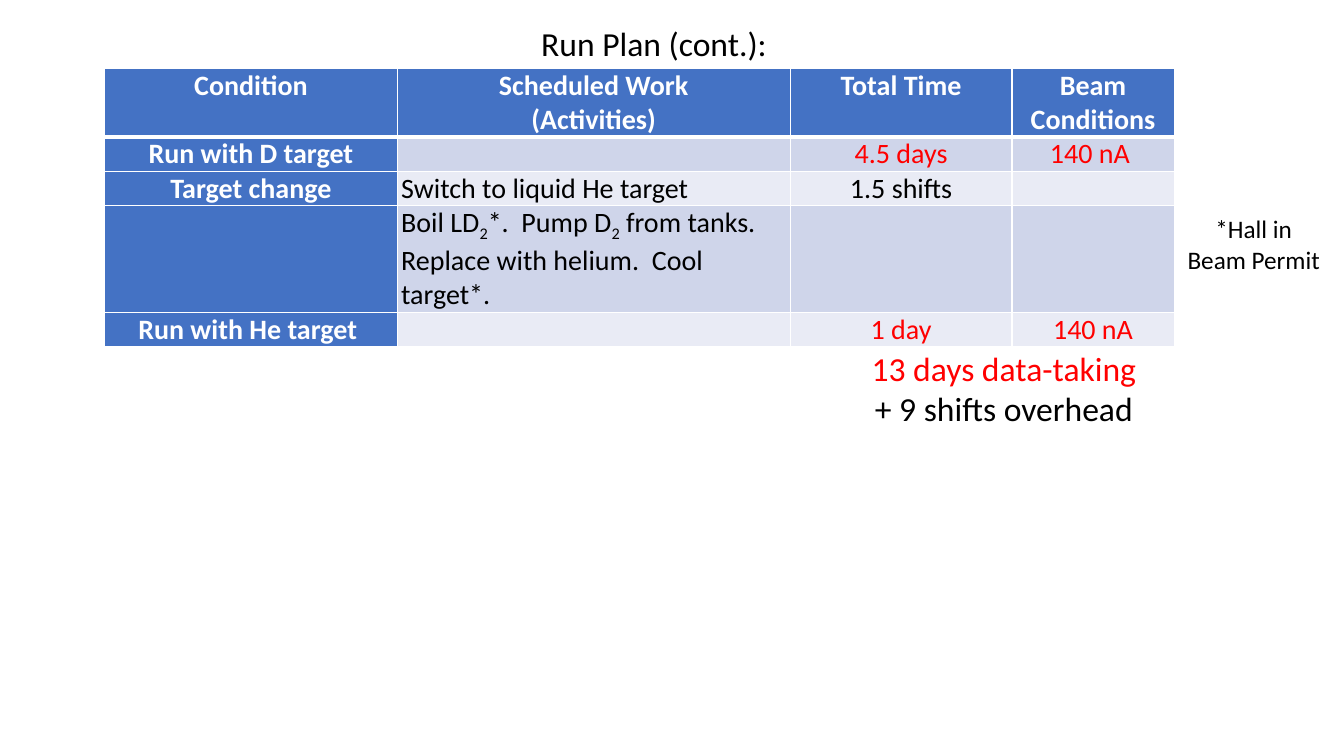
from lxml.etree import SubElement
from pptx import Presentation
from pptx.dml.color import RGBColor as Rgb
from pptx.enum.text import MSO_AUTO_SIZE as AutoSize, PP_ALIGN as Align
from pptx.oxml.ns import qn
from pptx.util import Inches, Pt

COLORS = {"text": "000000", "accent": "FF0000", "light": "FFFFFF",
          "header": "4472C4", "odd": "CFD5EA", "even": "E9EBF5"}


class RunPlanSlide:
    """Style and slide; lengths are percent of the slide's width and height."""

    font_name = "Calibri"

    def __init__(self, deck):
        self.deck = deck
        self.slide = deck.slides.add_slide(deck.slide_layouts[6])

    def across(self, share):
        return round(self.deck.slide_width * share / 100)

    def down(self, share):
        return round(self.deck.slide_height * share / 100)

    def box(self, left, top, width, height):
        return (self.across(left), self.down(top),
                self.across(width), self.down(height))

    def add_line(self, paragraph, text, size, color, bold=False, align=Align.CENTER):
        """Fill a paragraph; parts between underscores are subscripts."""
        paragraph.alignment = align
        for index, part in enumerate(text.split("_")):
            run = paragraph.add_run()
            run.text = part
            style = {"name": self.font_name, "size": Pt(size), "bold": bold}
            for key, value in style.items():
                setattr(run.font, key, value)
            run.font.color.rgb = Rgb.from_string(COLORS[color])
            if index % 2:
                run._r.get_or_add_rPr().set("baseline", "-25000")

    def text(self, place, lines, size, wrap=False, align=Align.CENTER):
        frame = self.slide.shapes.add_textbox(*self.box(*place)).text_frame
        for key, value in {"word_wrap": wrap,
                           "auto_size": AutoSize.SHAPE_TO_FIT_TEXT}.items():
            setattr(frame, key, value)
        for index, (line, color) in enumerate(lines):
            paragraph = frame.add_paragraph() if index else frame.paragraphs[0]
            self.add_line(paragraph, line, size, color, align=align)

    def borders(self, cell, widths):
        properties = cell._tc.get_or_add_tcPr()
        for position, (side, width) in enumerate(widths.items()):
            line = SubElement(properties, qn(f"a:ln{side}"), w=str(Pt(width)))
            fill = SubElement(line, qn("a:solidFill"))
            SubElement(fill, qn("a:srgbClr"), val=COLORS["light"])
            properties.insert(position, line)

    def table(self, left, top, widths, heights, rows, size):
        place = self.box(left, top, sum(widths), sum(heights))
        table = self.slide.shapes.add_table(len(rows), len(widths), *place).table
        for column, width in zip(table.columns, widths):
            column.width = self.across(width)
        for row, height in zip(table.rows, heights):
            row.height = self.down(height)
        for r, row in enumerate(rows):
            for c, (text, color) in enumerate(row):
                self.cell(table.cell(r, c), r, c, text, color, size)

    def cell(self, cell, r, c, text, color, size):
        heading = r == 0 or c == 0
        margins = {"margin_left": Inches(0.04), "margin_right": Inches(0.04),
                   "margin_top": 0, "margin_bottom": 0}
        for key, value in margins.items():
            setattr(cell, key, value)
        fill = "header" if heading else "odd" if r % 2 else "even"
        cell.fill.solid()
        cell.fill.fore_color.rgb = Rgb.from_string(COLORS[fill])
        self.borders(cell, {"L": 1, "R": 1, "T": 3 if r == 1 else 1,
                            "B": 3 if r == 0 else 1})
        align = Align.LEFT if c == 1 and r else Align.CENTER
        for index, line in enumerate(text.split("\n") if text else []):
            frame = cell.text_frame
            paragraph = frame.add_paragraph() if index else frame.paragraphs[0]
            self.add_line(paragraph, line, size, "light" if heading else color,
                          heading, align)


def main():
    deck = Presentation()
    deck.slide_width, deck.slide_height = Inches(13.33), Inches(7.5)
    plan = RunPlanSlide(deck)

    # Schedule
    empty = ("", "text")
    schedule = [
        [(head, "light") for head in ("Condition", "Scheduled Work\n(Activities)",
                                      "Total Time", "Beam Conditions")],
        [("Run with D target", "light"), empty,
         ("4.5 days", "accent"), ("140 nA ", "accent")],
        [("Target change", "light"), ("Switch to liquid He target", "text"),
         ("1.5 shifts", "text"), empty],
        [empty, ("Boil LD_2_*.  Pump D_2_ from tanks.  Replace with helium.  "
                 "Cool target*.", "text"), empty, empty],
        [("Run with He target ", "light"), empty,
         ("1 day", "accent"), ("140 nA", "accent")],
    ]
    plan.table(7.8, 9.07, [21.75, 29.25, 16.5, 12.07],
               [8.8, 4.4, 4.4, 14, 4.4], schedule, 20)

    # Footnote, title and totals
    plan.text((87.47, 27.6, 11.63, 9.47), [("*Hall in Beam Permit", "text")],
              18, wrap=True)
    plan.text((39.53, 2.4, 18.45, 6.67), [("Run Plan (cont.):", "text")],
              24, align=Align.LEFT)
    plan.text((64, 45.33, 21.38, 12.13), [("13 days data-taking", "accent"),
                                          ("+ 9 shifts overhead", "text")], 24)

    deck.save("out.pptx")


if __name__ == "__main__":
    main()
